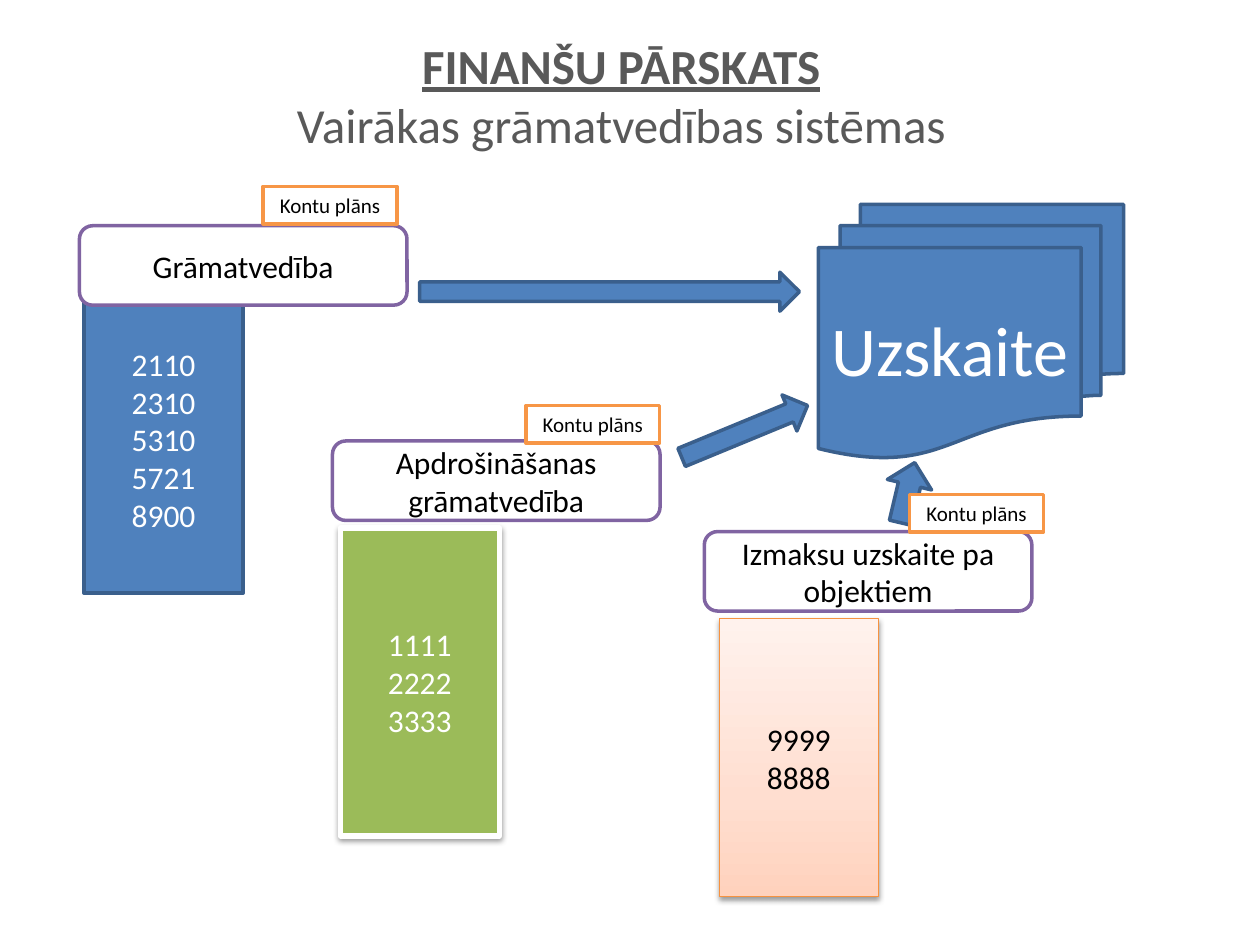
import copy

import lxml.etree
import pptx
import pptx.dml.color
import pptx.enum.shapes
import pptx.enum.text
import pptx.oxml.ns
import pptx.util

Pt = pptx.util.Pt
SHAPE = pptx.enum.shapes.MSO_SHAPE
CENTER = pptx.enum.text.PP_ALIGN.CENTER
MIDDLE = pptx.enum.text.MSO_ANCHOR.MIDDLE
qn = pptx.oxml.ns.qn

FONT = "Calibri"
COLORS = {
    "title": "595959",
    "blue": "4F81BD",
    "navy": "3A5F8C",
    "green": "9BBB59",
    "purple": "8064A2",
    "orange": "F79646",
    "amber": "F69240",
    "white": "FFFFFF",
    "black": "000000",
}
PEACH = [(0, "FFD2BD"), (0.35, "FFDED0"), (1, "FFF2ED")]


def rgb(name):
    """Return the palette colour of that name."""
    return pptx.dml.color.RGBColor.from_string(COLORS[name])


def style_paragraph(p, size, color):
    """Centre a paragraph and set its font."""
    p.alignment = CENTER
    p.font.name = FONT
    p.font.size = Pt(size)
    p.font.color.rgb = rgb(color)


def add_title(slide, heading, subtitle):
    """Add the two-line title with an underlined bold heading."""
    box = slide.shapes.add_textbox(Pt(31), Pt(21.6), Pt(648), Pt(64.8))
    tf = box.text_frame
    tf.word_wrap = True
    tf.vertical_anchor = MIDDLE
    p = tf.paragraphs[0]
    style_paragraph(p, 28, "title")
    r = p.add_run()
    r.text = heading
    r.font.bold = r.font.underline = True
    p.add_line_break()
    p.add_run().text = subtitle


def add_box(slide, kind, at, fill, line, width=2, lines=(), size=18, color="black"):
    """Add a filled and outlined shape with one paragraph per line of text."""
    sp = slide.shapes.add_shape(kind, *map(Pt, at))
    sp.shadow.inherit = False
    sp.fill.solid()
    sp.fill.fore_color.rgb = rgb(fill)
    sp.line.color.rgb = rgb(line)
    sp.line.width = Pt(width)
    tf = sp.text_frame
    tf.vertical_anchor = MIDDLE
    for i, text in enumerate(lines):
        p = tf.add_paragraph() if i else tf.paragraphs[0]
        p.text = text
        style_paragraph(p, size, color)
    return sp


def add_arrow(slide, at, rotation=0):
    """Add a blue block arrow."""
    sp = add_box(slide, SHAPE.RIGHT_ARROW, at, "blue", "navy")
    sp.rotation = rotation


def add_header(slide, left, top, text):
    """Add the rounded name box of an accounting system."""
    add_box(slide, SHAPE.ROUNDED_RECTANGLE, (left, top, 187.2, 45.4),
            "white", "purple", lines=[text])


def add_tag(slide, left, top):
    """Add a chart-of-accounts tag."""
    add_box(slide, SHAPE.RECTANGLE, (left, top, 76.5, 21.4),
            "white", "orange", lines=["Kontu plāns"], size=12)


def cast_shadow(sp):
    """Give a shape a soft shadow straight below it."""
    effects = sp._element.spPr.find(qn("a:effectLst"))
    shadow = lxml.etree.SubElement(
        effects, qn("a:outerShdw"), blurRad=str(Pt(3.15)), dist=str(Pt(1.57)),
        dir="5400000", rotWithShape="0")
    color = lxml.etree.SubElement(shadow, qn("a:srgbClr"), val=COLORS["black"])
    lxml.etree.SubElement(color, qn("a:alpha"), val="38000")


def fill_gradient(sp, stops):
    """Fill a shape with a gradient that rises from bottom to top."""
    sp.fill.gradient()
    sp.fill.gradient_angle = 90
    gs_list = sp._element.spPr.find(".//" + qn("a:gsLst"))
    while len(gs_list) < len(stops):
        gs_list.append(copy.deepcopy(gs_list[0]))
    for stop, (position, color) in zip(sp.fill.gradient_stops, stops):
        stop.position = position
        stop.color.rgb = pptx.dml.color.RGBColor.from_string(color)


def main():
    """Build the slide and save it."""
    prs = pptx.Presentation()
    prs.slide_width, prs.slide_height = Pt(720), Pt(540)
    slide = prs.slides.add_slide(prs.slide_layouts[6])

    add_title(slide, "FINANŠU PĀRSKATS", "Vairākas grāmatvedības sistēmas")
    add_box(slide, SHAPE.FLOWCHART_MULTIDOCUMENT, (467.7, 116.8, 174.4, 145),
            "blue", "navy", lines=["Uzskaite"], size=40, color="white")

    add_box(slide, SHAPE.RECTANGLE, (48, 163, 91, 176), "blue", "navy",
            lines=["2110", "2310", "5310", "5721", "8900"], color="white")
    add_header(slide, 45.4, 129, "Grāmatvedība")

    sp = add_box(slide, SHAPE.RECTANGLE, (194.4, 301.7, 91, 176), "green", "white", 3,
                 ["1111", "2222", "3333"], color="white")
    cast_shadow(sp)
    add_header(slide, 190, 252, "Apdrošināšanas grāmatvedība")

    sp = add_box(slide, SHAPE.RECTANGLE, (411, 353.5, 91, 158.7), "white", "amber", 0.75,
                 ["9999", "8888"])
    fill_gradient(sp, PEACH)
    cast_shadow(sp)
    add_header(slide, 402.5, 303.8, "Izmaksu uzskaite pa objektiem")

    add_arrow(slide, (239.8, 155.5, 217, 22.3))
    add_arrow(slide, (386.6, 235.4, 77.8, 22.3), 337.6)
    add_arrow(slide, (501, 268.6, 35.3, 25.9), 283.3)

    for left, top in [(150.3, 106.5), (300.5, 231.8), (519.8, 282.5)]:
        add_tag(slide, left, top)

    prs.save("out.pptx")


if __name__ == "__main__":
    main()
